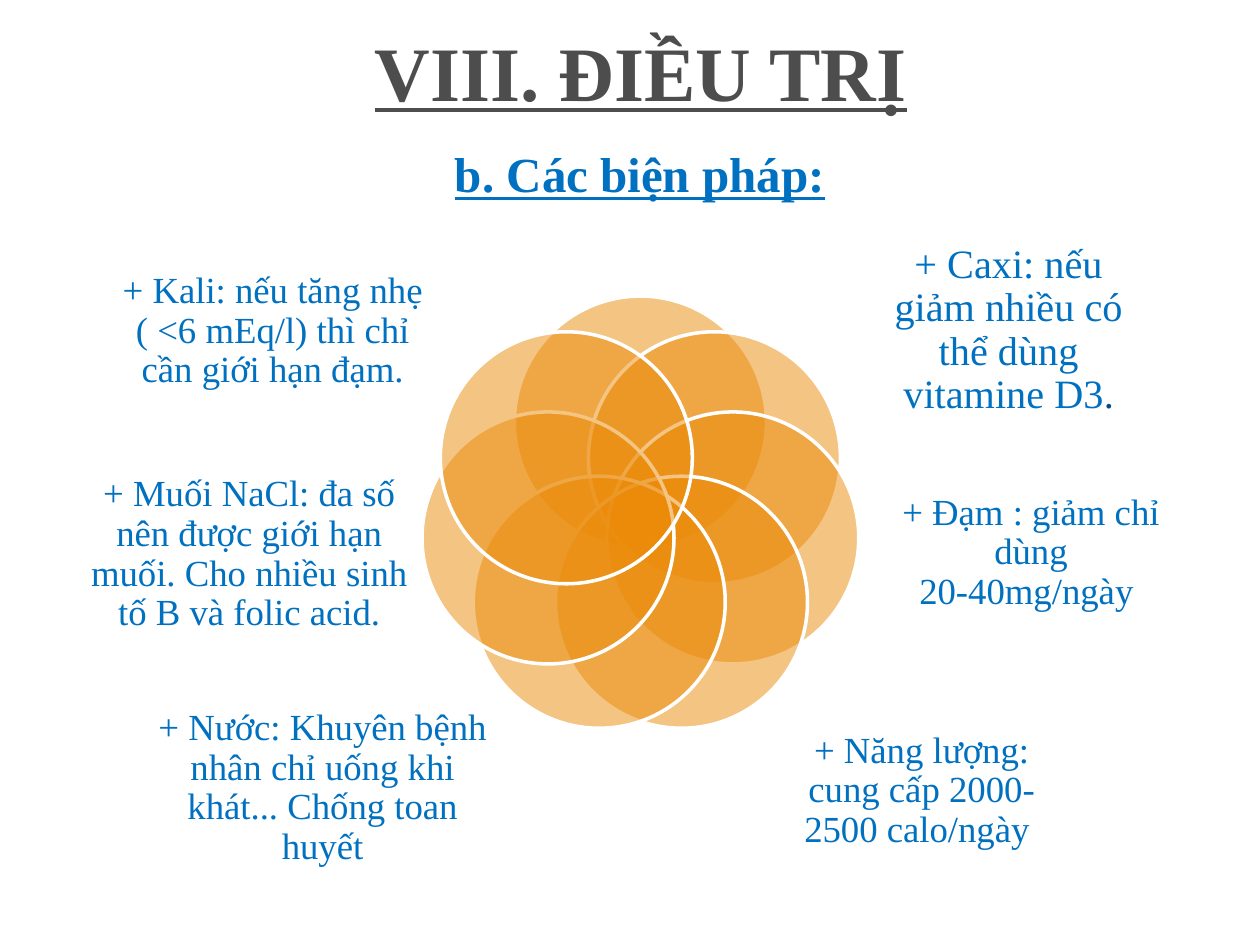
from math import cos, pi, sin

from lxml.etree import SubElement
from pptx import Presentation
from pptx.dml.color import RGBColor
from pptx.enum.shapes import MSO_SHAPE
from pptx.enum.text import MSO_ANCHOR, PP_ALIGN
from pptx.oxml.ns import qn
from pptx.util import Cm, Pt

GREY = RGBColor(0x4D, 0x4D, 0x4D)
BLUE = RGBColor(0x00, 0x70, 0xC0)
NAVY = RGBColor(0x00, 0x4D, 0x86)
ORANGE = RGBColor(0xEB, 0x8B, 0x09)
WHITE = RGBColor(0xFF, 0xFF, 0xFF)

CENTER_X, CENTER_Y = 12.91, 10.42
RING_RADIUS = 1.91
DIAMETER = 5.08

PETALS = [
    ((9.09, 2.77, 7.62, 1.6), 28, [("b. Các biện pháp:", BLUE)]),
    ((17.58, 4.95, 5.51, 3.43), 23,
     [("+ Caxi: nếu giảm nhiều có thể dùng vitamine D3", BLUE), (".", NAVY)]),
    ((18.08, 9.32, 5.41, 3.66), 21,
     [("+ Đạm : giảm chỉ dùng 20-40mg/ngày ", BLUE)]),
    ((15.67, 14.27, 5.82, 3.35), 21,
     [("+ Năng lượng: cung cấp 2000-2500 calo/ngày ", BLUE)]),
    ((3.18, 13.97, 6.65, 3.84), 21,
     [("+ Nước: Khuyên bệnh nhân chỉ uống khi khát... Chống toan huyết", BLUE)]),
    ((1.7, 8.92, 6.65, 4.52), 21,
     [("+ Muối NaCl: đa số nên được giới hạn muối. "
       "Cho nhiều sinh tố B và folic acid.", BLUE)]),
    ((2.31, 4.7, 6.38, 3.96), 21,
     [("+ Kali: nếu tăng nhẹ ( <6 mEq/l) thì chỉ cần giới hạn đạm.", BLUE)]),
]


class SlideBuilder:
    font_name = "Times New Roman"
    line_spacing = 0.9

    def __init__(self, slide):
        self.slide = slide

    def text(self, box, size, runs, heading=False, top_margin=0):
        shape = self.slide.shapes.add_textbox(*map(Cm, box))
        frame = shape.text_frame
        frame.word_wrap = True
        frame.vertical_anchor = MSO_ANCHOR.MIDDLE
        frame.margin_left = frame.margin_right = frame.margin_bottom = 0
        frame.margin_top = Cm(top_margin)
        paragraph = frame.paragraphs[0]
        paragraph.alignment = PP_ALIGN.CENTER
        paragraph.line_spacing = self.line_spacing
        paragraph.font.name = self.font_name
        paragraph.font.size = Pt(size)
        paragraph.font.bold = heading
        paragraph.font.underline = heading
        for content, color in runs:
            run = paragraph.add_run()
            run.text = content
            run.font.color.rgb = color

    def circle(self, center_x, center_y, diameter):
        left, top = center_x - diameter / 2, center_y - diameter / 2
        shape = self.slide.shapes.add_shape(
            MSO_SHAPE.OVAL, Cm(left), Cm(top), Cm(diameter), Cm(diameter))
        shape.shadow.inherit = False
        shape.fill.solid()
        shape.fill.fore_color.rgb = ORANGE
        color = shape.fill._xPr.find(qn("a:solidFill"))[0]
        SubElement(color, qn("a:alpha"), val="50000")
        shape.line.color.rgb = WHITE
        shape.line.width = Pt(2)


def main():
    presentation = Presentation()
    presentation.slide_width = Cm(25.4)
    presentation.slide_height = Cm(19.05)
    builder = SlideBuilder(presentation.slides.add_slide(presentation.slide_layouts[6]))

    builder.text((2.44, 0.43, 20.96, 1.98), 44, [("VIII. ĐIỀU TRỊ", GREY)],
                 heading=True, top_margin=0.25)
    for index, (box, size, runs) in enumerate(PETALS):
        angle = 2 * pi * index / len(PETALS)
        builder.circle(CENTER_X + RING_RADIUS * sin(angle),
                       CENTER_Y - RING_RADIUS * cos(angle), DIAMETER)
        builder.text(box, size, runs, heading=index == 0)

    presentation.save("out.pptx")


if __name__ == "__main__":
    main()
